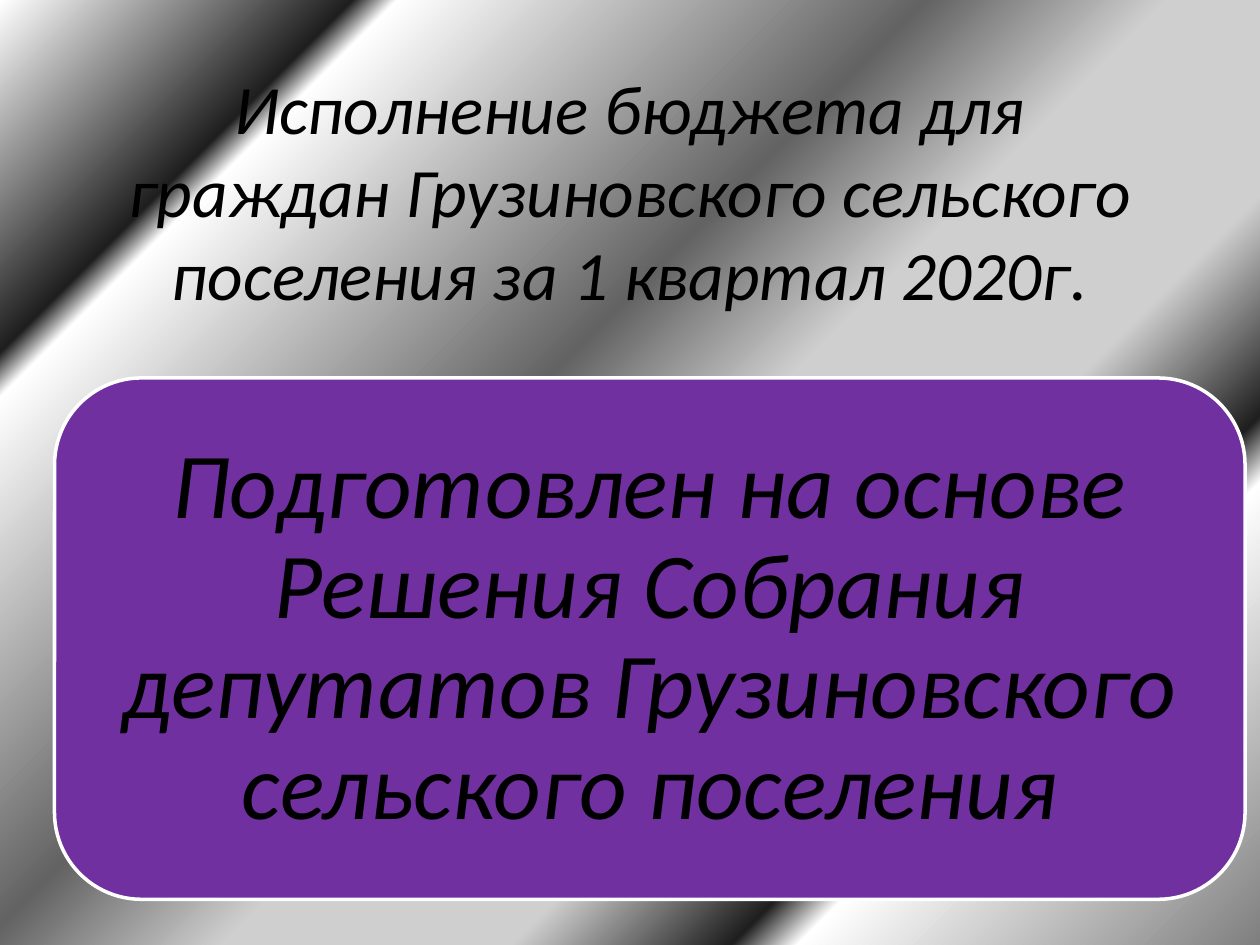
from lxml.etree import SubElement
from pptx import Presentation
from pptx.dml.color import RGBColor
from pptx.enum.shapes import MSO_SHAPE
from pptx.enum.text import MSO_ANCHOR, PP_ALIGN
from pptx.oxml.ns import qn
from pptx.util import Cm, Pt

STOPS = [
    (0, "FFFFFF"), (16, "1F1F1F"), (18, "FFFFFF"),
    (42, "636363"), (53, "CFCFCF"), (66, "CFCFCF"),
    (76, "1F1F1F"), (79, "FFFFFF"), (100, "7F7F7F"),
]
TITLE = "Исполнение бюджета для граждан Грузиновского сельского поселения за 1 квартал 2020г."
BASIS = "Подготовлен на основе Решения Собрания депутатов Грузиновского сельского поселения"


def color(value):
    """Turn a hex string into a colour."""
    return RGBColor.from_string(value)


def paint_background(page):
    """Fill the page with a diagonal metallic gradient."""
    fill = page.background.fill
    fill.gradient()
    fill.gradient_angle = 315
    stops = next(page.element.iter(qn("a:gsLst")))
    for stop in list(stops):
        stops.remove(stop)
    for position, value in STOPS:
        stop = SubElement(stops, qn("a:gs"), pos=str(position * 1000))
        SubElement(stop, qn("a:srgbClr"), val=value)


def add_text(page, box, text, size, inset, spacing=None):
    """Place centred italic text in a box."""
    frame = page.shapes.add_textbox(*map(Cm, box)).text_frame
    frame.word_wrap = True
    frame.vertical_anchor = MSO_ANCHOR.MIDDLE
    frame.margin_left = frame.margin_right = Cm(inset)
    frame.margin_top = frame.margin_bottom = Cm(inset)
    frame.text = text
    para = frame.paragraphs[0]
    para.alignment = PP_ALIGN.CENTER
    para.line_spacing = spacing
    font = para.runs[0].font
    font.name = "Calibri"
    font.size = Pt(size)
    font.italic = True
    font.color.rgb = color("000000")


def add_title(page, box):
    """Place the title of the page."""
    add_text(page, box, TITLE, 39.6, 0.25)


def add_basis_card(page, box):
    """Place the rounded card with its text inset on all sides."""
    card = page.shapes.add_shape(MSO_SHAPE.ROUNDED_RECTANGLE, *map(Cm, box))
    card.shadow.inherit = False
    card.fill.solid()
    card.fill.fore_color.rgb = color("7030A0")
    card.line.color.rgb = color("FFFFFF")
    card.line.width = Pt(2)
    left, top, width, height = box
    gap = 0.51
    inner = (left + gap, top + gap, width - 2 * gap, height - 2 * gap)
    add_text(page, inner, BASIS, 53, 0.56, 0.9)


def main():
    """Build and save the deck."""
    deck = Presentation()
    deck.slide_width, deck.slide_height = Cm(25.4), Cm(19.05)
    page = deck.slides.add_slide(deck.slide_layouts[6])
    paint_background(page)
    add_title(page, (1.9, 1.52, 21.6, 4.6))
    add_basis_card(page, (1.1, 7.62, 24, 10.51))
    deck.save("out.pptx")


if __name__ == "__main__":
    main()
